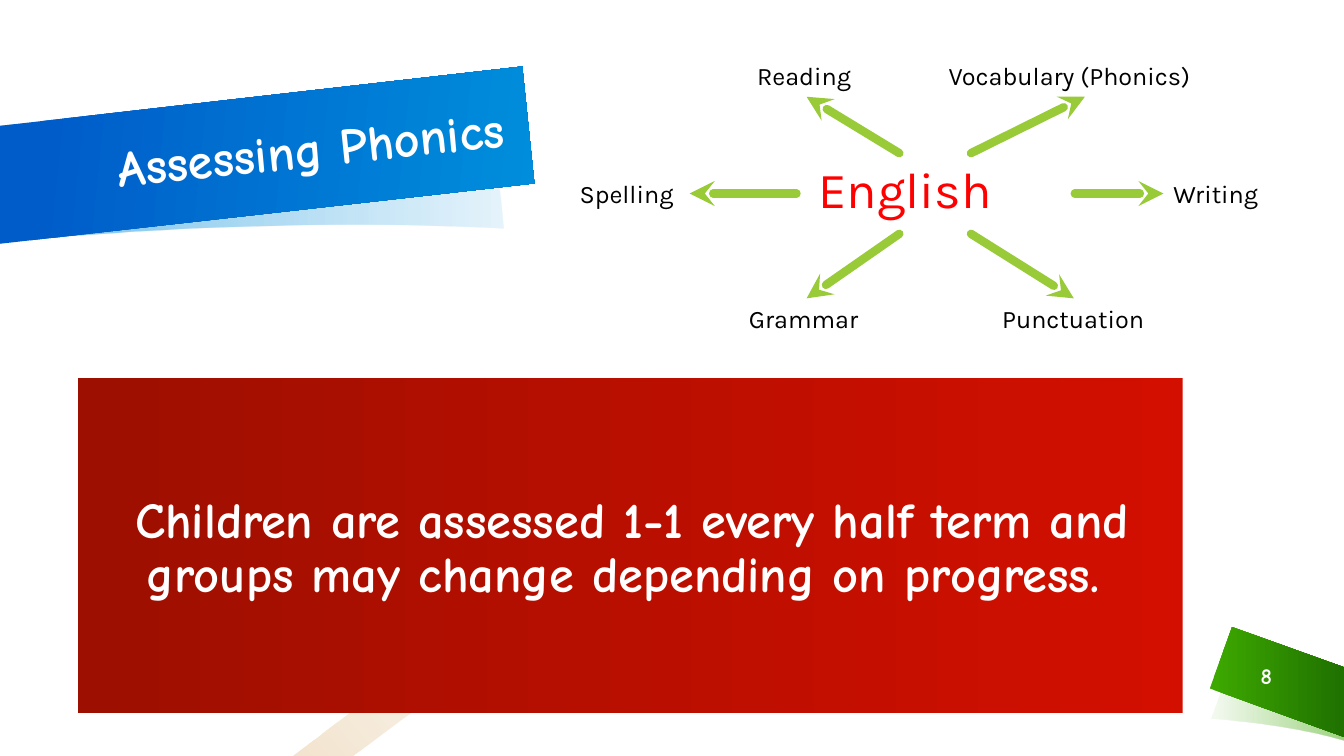
from dataclasses import dataclass

import pptx
import pptx.dml.color
import pptx.enum.shapes
import pptx.enum.text
import pptx.oxml
import pptx.oxml.ns
import pptx.util
from pptx.util import Inches

COLORS = {
    "white": "FFFFFF", "black": "000000", "red": "FF0000", "arrow": "99CB38",
    "leaf": "3DA800", "forest": "1F7100", "sky": "008EDC", "ocean": "005CC9",
    "tan": "C07400", "scarlet": "D30F00", "maroon": "9D0F00",
}
HEADING_FONT, MAP_FONT = "Comic Neue", "Karla"
ALIGN = pptx.enum.text.PP_ALIGN
ANCHOR = pptx.enum.text.MSO_ANCHOR


@dataclass
class Gradient:
    angle: int
    stops: list[tuple[int, str, int]]  # position %, colour, opacity %


@dataclass
class Ribbon:
    """Outline points: two numbers are a line end, six are a Bezier curve."""
    outline: list[tuple[float, ...]]
    gradient: Gradient


@dataclass
class Label:
    text: str
    box: tuple[float, float, float, float]
    size: int = 18
    color: str = "black"
    font: str = MAP_FONT
    bold: bool = False
    align: ALIGN = ALIGN.LEFT
    anchor: ANCHOR = ANCHOR.TOP
    line_spacing: float = 1.0
    insets: tuple[float, float, float, float] = (0.1, 0.05, 0.1, 0.05)
    rotation: float = 0


@dataclass
class Arrow:
    start: tuple[float, float]
    end: tuple[float, float]


RIBBONS = [
    Ribbon([(12.02, 7.13), (12.02, 7.13, 12.78, 7.18, 13.33, 7.35), (13.33, 6.68),
            (12.72, 6.51, 12.24, 6.52, 12.24, 6.52)],
           Gradient(0, [(0, "leaf", 6), (3, "leaf", 6), (100, "leaf", 50)])),
    Ribbon([(13.33, 6.62), (12.22, 6.22), (12, 6.83), (13.33, 7.31)],
           Gradient(0, [(0, "leaf", 100), (3, "leaf", 100), (100, "forest", 100)])),
    Ribbon([(4.99, 2.27), (4.87, 1.13), (4.87, 1.13, 3.13, 0.94, -0.02, 1.25),
            (-0.02, 2.41), (2.86, 2.12, 4.99, 2.27, 4.99, 2.27)],
           Gradient(180, [(0, "sky", 10), (88, "sky", 50), (100, "sky", 50)])),
    Ribbon([(-0.01, 2.42), (5.3, 1.82), (5.18, 0.66), (-0.01, 1.25)],
           Gradient(6, [(0, "ocean", 100), (9, "ocean", 100), (100, "sky", 100)])),
    Ribbon([(4.9, 6.2), (4.15, 6.55), (2.9, 7.5), (3.5, 7.5), (4.41, 6.82)],
           Gradient(139, [(0, "tan", 5), (100, "tan", 20)])),
]

HEADING_STYLE = dict(color="white", font=HEADING_FONT, bold=True,
                     align=ALIGN.CENTER, anchor=ANCHOR.MIDDLE)
TITLE = Label("Assessing Phonics", (0.92, 0.92, 4.33, 1.16), 36,
              line_spacing=0.9, rotation=-6, **HEADING_STYLE)
MESSAGE = Label("Children are assessed 1-1 every half term and groups may change "
                "depending on progress. ", (0.77, 3.75, 10.96, 3.32), 36,
                line_spacing=0.9, insets=(0.16, 0.2, 0.12, 0.12), **HEADING_STYLE)
MESSAGE_FILL = Gradient(180, [(0, "scarlet", 100), (100, "maroon", 100)])
PAGE_NUMBER = Label("8", (12.21, 6.5, 0.7, 0.4), 16, **HEADING_STYLE)

TOP, MIDDLE, BOTTOM = 0.55, 1.72, 2.96
SUBJECT_MAP = [
    Label(" English", (7.9, 1.52, 2.76, 0.8), 36, "red"),
    Label("Reading", (7.41, TOP, 1.18, 0.4)),
    Label("Writing", (11.54, MIDDLE, 1.18, 0.4)),
    Label("Spelling", (5.65, MIDDLE, 1.18, 0.4)),
    Label("Grammar", (7.33, BOTTOM, 1.34, 0.4)),
    Label("Punctuation", (9.84, BOTTOM, 1.61, 0.4)),
    Label("Vocabulary (Phonics)", (9.31, TOP, 2.9, 0.4)),
]
ARROWS = [
    Arrow((7.9, 1.92), (6.84, 1.92)),
    Arrow((8.92, 1.52), (8, 0.96)),
    Arrow((9.63, 1.52), (10.76, 0.96)),
    Arrow((10.66, 1.92), (11.54, 1.92)),
    Arrow((8.92, 2.32), (8, 2.96)),
    Arrow((9.63, 2.32), (10.65, 2.96)),
]


def rgb(name: str) -> pptx.dml.color.RGBColor:
    return pptx.dml.color.RGBColor.from_string(COLORS[name])


def fill_gradient(shape, gradient: Gradient) -> None:
    shape.shadow.inherit = False
    shape.line.fill.background()
    shape.fill.gradient()
    stops = "".join(
        f'<a:gs pos="{position * 1000}"><a:srgbClr val="{COLORS[color]}">'
        f'<a:alpha val="{opacity * 1000}"/></a:srgbClr></a:gs>'
        for position, color, opacity in gradient.stops)
    grad_fill = pptx.oxml.parse_xml(
        f'<a:gradFill {pptx.oxml.ns.nsdecls("a")} rotWithShape="1"><a:gsLst>{stops}</a:gsLst>'
        f'<a:lin ang="{gradient.angle * 60000}" scaled="0"/></a:gradFill>')
    properties = shape.element.spPr
    properties.replace(properties.find(pptx.oxml.ns.qn("a:gradFill")), grad_fill)


def flatten(outline: list[tuple[float, ...]], steps: int = 24) -> list[tuple[float, float]]:
    points = [outline[0]]
    for segment in outline[1:]:
        if len(segment) == 2:
            points.append(segment)
            continue
        corners = [points[-1], segment[:2], segment[2:4], segment[4:]]
        for step in range(1, steps + 1):
            t = step / steps
            weights = ((1 - t) ** 3, 3 * t * (1 - t) ** 2, 3 * t * t * (1 - t), t ** 3)
            points.append(tuple(sum(w * c[axis] for w, c in zip(weights, corners))
                                for axis in (0, 1)))
    return points


def draw_ribbon(slide, ribbon: Ribbon) -> None:
    points = [(Inches(x), Inches(y)) for x, y in flatten(ribbon.outline)]
    builder = slide.shapes.build_freeform(*points[0])
    builder.add_line_segments(points[1:], close=True)
    fill_gradient(builder.convert_to_shape(), ribbon.gradient)


def write_label(shape, label: Label) -> None:
    shape.rotation = label.rotation
    frame = shape.text_frame
    frame.word_wrap = True
    frame.vertical_anchor = label.anchor
    (frame.margin_left, frame.margin_top,
     frame.margin_right, frame.margin_bottom) = map(Inches, label.insets)
    paragraph = frame.paragraphs[0]
    paragraph.alignment = label.align
    paragraph.line_spacing = label.line_spacing
    run = paragraph.add_run()
    run.text = label.text
    run.font.name = label.font
    run.font.size = pptx.util.Pt(label.size)
    run.font.bold = label.bold
    run.font.color.rgb = rgb(label.color)


def draw_label(slide, label: Label) -> None:
    write_label(slide.shapes.add_textbox(*map(Inches, label.box)), label)


def draw_panel(slide, label: Label, gradient: Gradient) -> None:
    panel = slide.shapes.add_shape(pptx.enum.shapes.MSO_SHAPE.RECTANGLE,
                                   *map(Inches, label.box))
    fill_gradient(panel, gradient)
    write_label(panel, label)


def draw_arrow(slide, arrow: Arrow) -> None:
    connector = slide.shapes.add_connector(pptx.enum.shapes.MSO_CONNECTOR.STRAIGHT,
                                           *map(Inches, arrow.start + arrow.end))
    connector.line.color.rgb = rgb("arrow")
    connector.line.width = pptx.util.Pt(6)
    namespace = pptx.oxml.ns.nsdecls("a")
    line = connector.line._get_or_add_ln()
    line.set("cap", "rnd")
    line.append(pptx.oxml.parse_xml(f'<a:tailEnd {namespace} type="stealth"/>'))
    connector.element.spPr.append(pptx.oxml.parse_xml(f"<a:effectLst {namespace}/>"))


def main() -> None:
    deck = pptx.Presentation()
    deck.slide_width, deck.slide_height = Inches(13.33), Inches(7.5)
    slide = deck.slides.add_slide(deck.slide_layouts[6])

    # Decorative ribbons
    for ribbon in RIBBONS:
        draw_ribbon(slide, ribbon)

    # Title, message and page number
    draw_label(slide, TITLE)
    draw_panel(slide, MESSAGE, MESSAGE_FILL)
    draw_label(slide, PAGE_NUMBER)

    # Map of English subjects
    for subject in SUBJECT_MAP:
        draw_label(slide, subject)
    for arrow in ARROWS:
        draw_arrow(slide, arrow)

    deck.save("out.pptx")


if __name__ == "__main__":
    main()
